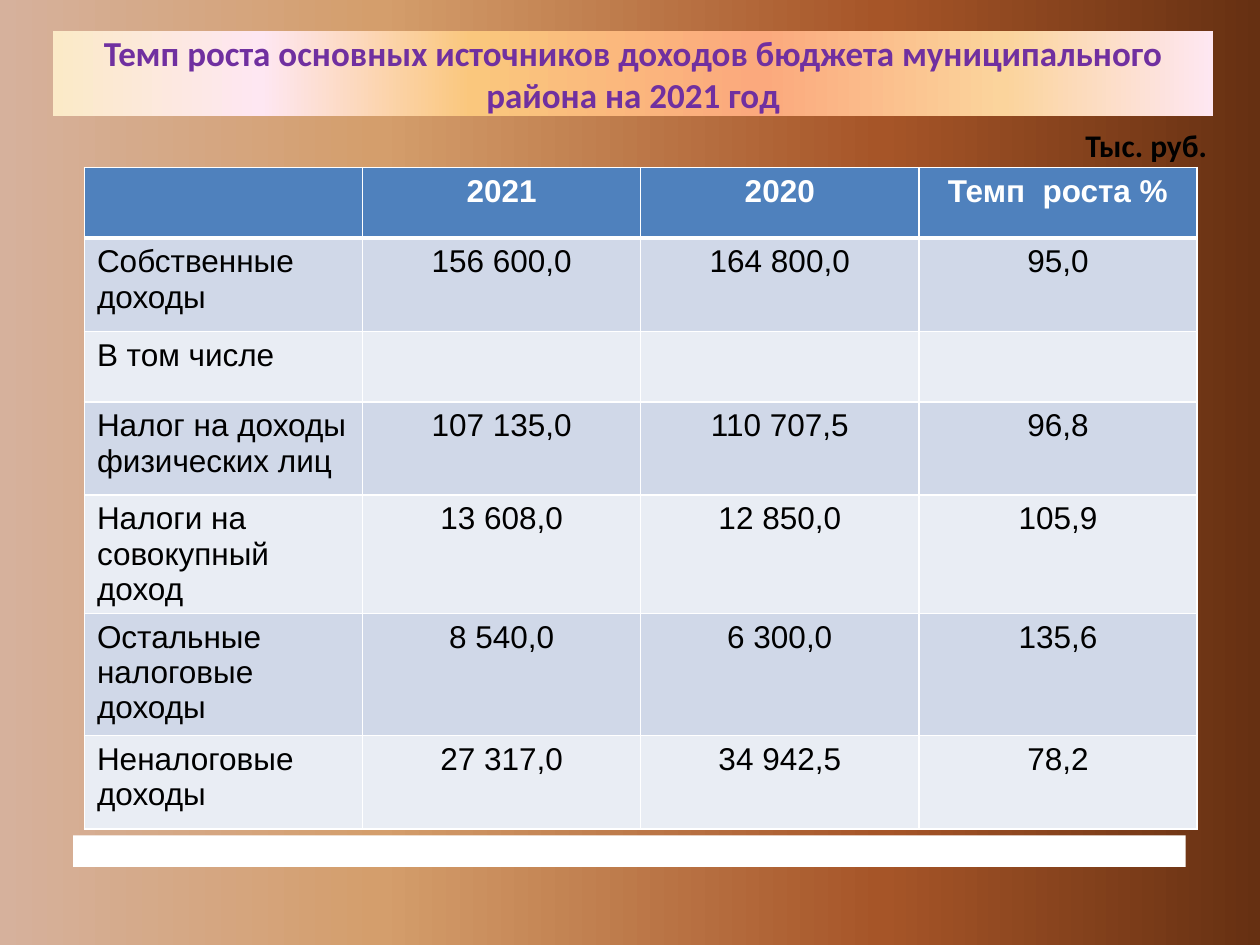
from lxml import etree
from pptx import Presentation
from pptx.dml.color import RGBColor
from pptx.enum.shapes import MSO_SHAPE
from pptx.enum.text import MSO_ANCHOR, PP_ALIGN
from pptx.oxml.ns import qn
from pptx.util import Inches, Pt

RECT = MSO_SHAPE.RECTANGLE
MIDDLE = MSO_ANCHOR.MIDDLE
LEFT, CENTER, RIGHT = PP_ALIGN.LEFT, PP_ALIGN.CENTER, PP_ALIGN.RIGHT

WHITE = RGBColor(0xFF, 0xFF, 0xFF)
BLACK = RGBColor(0, 0, 0)
PURPLE = RGBColor(0x70, 0x30, 0xA0)
HEADER_BLUE = RGBColor(0x4F, 0x81, 0xBD)
BANDS = (RGBColor(0xD0, 0xD8, 0xE8), RGBColor(0xE9, 0xED, 0xF4))
PINK = RGBColor(0xFE, 0xE7, 0xF2)
WOOD = [(0, RGBColor(0xD6, 0xB1, 0x9C)), (30, RGBColor(0xD4, 0x9E, 0x6C)),
        (70, RGBColor(0xA6, 0x55, 0x28)), (100, RGBColor(0x66, 0x30, 0x12))]
SUNRISE = [(0, RGBColor(0xFB, 0xEA, 0xC7)), (18, PINK),
           (36, RGBColor(0xFA, 0xC7, 0x7D)), (61, RGBColor(0xFB, 0xA9, 0x7D)),
           (82, RGBColor(0xFB, 0xD4, 0x9C)), (100, PINK)]

ROWS = [
    ("", "2021", "2020", "Темп  роста %"),
    ("Собственные доходы", "156 600,0", "164 800,0", "95,0"),
    ("В том числе", "", "", ""),
    ("Налог на доходы физических лиц", "107 135,0", "110 707,5", "96,8"),
    ("Налоги на совокупный доход", "13 608,0", "12 850,0", "105,9"),
    ("Остальные налоговые доходы", "8 540,0", "6 300,0", "135,6"),
    ("Неналоговые доходы", "27 317,0", "34 942,5", "78,2"),
]
ROW_HEIGHTS = [0.56, 0.74, 0.56, 0.74, 0.74, 0.97, 0.74]
TABLE_WIDTH = 8.83


def set_gradient(fill, owner, stops):
    """Fill with a left-to-right gradient; owner is the XML element holding the fill."""
    fill.gradient()
    fill.gradient_angle = 0
    gs_list = next(owner.iter(qn("a:gsLst")))
    for gs in list(gs_list):
        gs_list.remove(gs)
    for percent, color in stops:
        gs = etree.SubElement(gs_list, qn("a:gs"), pos=str(percent * 1000))
        etree.SubElement(gs, qn("a:srgbClr"), val=str(color))


def add_run(tf, text, size, font, color, bold, align):
    p = tf.paragraphs[0]
    p.alignment = align
    r = p.add_run()
    r.text = text
    r.font.size, r.font.name, r.font.bold = Pt(size), font, bold
    r.font.color.rgb = color


def add_bar(s, left, top, width, height):
    sp = s.shapes.add_shape(RECT, *map(Inches, (left, top, width, height)))
    sp.shadow.inherit = False
    sp.line.fill.background()
    return sp


def clear_margins(tf):
    tf.word_wrap = True
    tf.margin_left = tf.margin_top = tf.margin_right = tf.margin_bottom = 0


def add_title(s):
    sp = add_bar(s, 0.42, 0.25, 9.21, 0.67)
    set_gradient(sp.fill, sp._element, SUNRISE)
    tf = sp.text_frame
    clear_margins(tf)
    tf.vertical_anchor = MIDDLE
    add_run(tf, "Темп роста основных источников доходов бюджета муниципального "
            "района на 2021 год", 20, "Calibri", PURPLE, True, CENTER)


def add_unit(s):
    tf = s.shapes.add_textbox(*map(Inches, (5.25, 1, 4.33, 0.3))).text_frame
    clear_margins(tf)
    add_run(tf, "Тыс. руб.", 18, "Calibri", BLACK, True, RIGHT)


def set_borders(cell, bottom):
    """Draw white borders, 1 pt except for the given bottom width."""
    tc_pr = cell._tc.get_or_add_tcPr()
    for i, (side, width) in enumerate(
            (("lnL", 1), ("lnR", 1), ("lnT", 1), ("lnB", bottom))):
        ln = etree.Element(qn(f"a:{side}"), w=str(Pt(width)))
        solid = etree.SubElement(ln, qn("a:solidFill"))
        etree.SubElement(solid, qn("a:srgbClr"), val=str(WHITE))
        tc_pr.insert(i, ln)


def add_income_table(s):
    n_cols = len(ROWS[0])
    table = s.shapes.add_table(
        len(ROWS), n_cols, Inches(0.67), Inches(1.33),
        Inches(TABLE_WIDTH), Inches(sum(ROW_HEIGHTS))).table
    for col in table.columns:
        col.width = Inches(TABLE_WIDTH / n_cols)
    for i, (values, height) in enumerate(zip(ROWS, ROW_HEIGHTS)):
        table.rows[i].height = Inches(height)
        header = i == 0
        for j, text in enumerate(values):
            cell = table.cell(i, j)
            cell.fill.solid()
            cell.fill.fore_color.rgb = HEADER_BLUE if header else BANDS[(i - 1) % 2]
            set_borders(cell, 3 if header else 1)
            if text:
                add_run(cell.text_frame, text, 18, "Arial",
                        WHITE if header else BLACK, header, CENTER if j else LEFT)


def add_footer_bar(s):
    sp = add_bar(s, 0.58, 6.63, TABLE_WIDTH, 0.25)
    sp.fill.solid()
    sp.fill.fore_color.rgb = WHITE


def main():
    prs = Presentation()
    prs.slide_width, prs.slide_height = Inches(10), Inches(7.5)
    s = prs.slides.add_slide(prs.slide_layouts[6])
    set_gradient(s.background.fill, s._element, WOOD)
    add_title(s)
    add_income_table(s)
    add_unit(s)
    add_footer_bar(s)
    prs.save("out.pptx")


if __name__ == "__main__":
    main()
